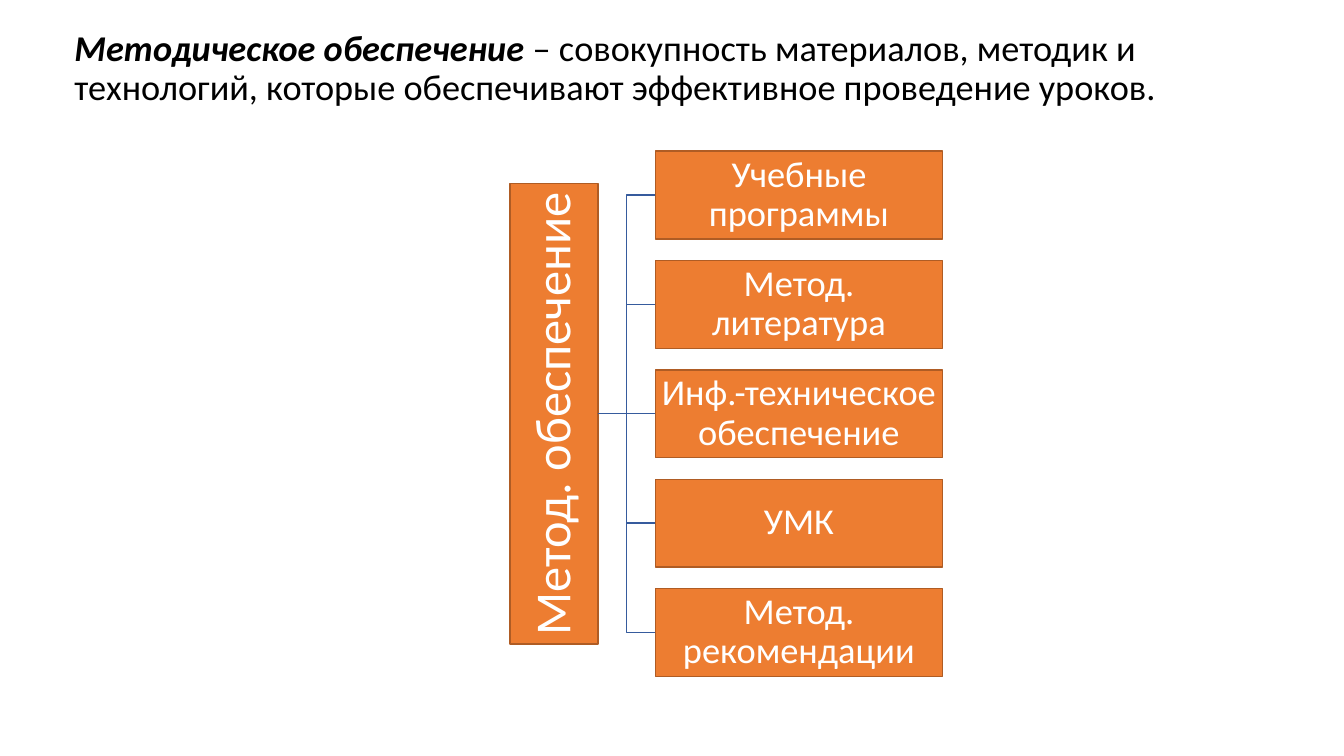
from pptx import Presentation
from pptx import util as u
from pptx.dml.color import RGBColor
from pptx.enum import shapes, text
from pptx.oxml.ns import qn
from lxml import etree

ORANGE = RGBColor(0xED, 0x7D, 0x31)
BROWN = RGBColor(0xAF, 0x5C, 0x24)
BLUE = RGBColor(0x36, 0x5B, 0x9D)
WHITE = RGBColor(0xFF, 0xFF, 0xFF)
BLACK = RGBColor(0, 0, 0)

WIDE, HIGH = 2.85, 0.87
LEFT, TOP, STEP = 6.5, 1.5, 1.085
ROOT, LONG = 5.93, 4.57
BEND = (ROOT + LEFT) / 2
TOPICS = [
    "Учебные программы",
    "Метод. литература",
    "Инф.-техническое обеспечение",
    "УМК",
    "Метод. рекомендации",
]


def style(item, **values):
    for name, value in values.items():
        setattr(item, name, value)


def write(para, words, size, color, **values):
    para.line_spacing = 0.9
    run = para.add_run()
    run.text = words
    style(run.font, name="Calibri", size=u.Pt(size), **values)
    run.font.color.rgb = color


def stroke(line, color):
    line.color.rgb = color
    line.width = u.Pt(1)


def add_title(slide):
    box = slide.shapes.add_textbox(
        u.Inches(0.64), u.Inches(0.25), u.Inches(11.5), u.Inches(1.07))
    box.text_frame.word_wrap = True
    para = box.text_frame.paragraphs[0]
    write(para, "Методическое обеспечение ", 25.9, BLACK, bold=True, italic=True)
    write(para, "– совокупность материалов, методик и технологий, "
          "которые обеспечивают эффективное проведение уроков.", 25.9, BLACK)


def add_box(slide, words, left, top, wide, size, inset, turn=0):
    box = slide.shapes.add_shape(
        shapes.MSO_SHAPE.RECTANGLE, u.Inches(left), u.Inches(top),
        u.Inches(wide), u.Inches(HIGH))
    box.shadow.inherit = False
    box.rotation = turn
    box.fill.solid()
    box.fill.fore_color.rgb = ORANGE
    stroke(box.line, BROWN)
    frame = box.text_frame
    style(frame, word_wrap=True, vertical_anchor=text.MSO_ANCHOR.MIDDLE)
    for side in ("left", "top", "right", "bottom"):
        setattr(frame, f"margin_{side}", u.Inches(inset))
    para = frame.paragraphs[0]
    para.alignment = text.PP_ALIGN.CENTER
    write(para, words, size, WHITE)
    return box


def add_branch(slide, start, end):
    points = [(BEND, start), (BEND, end), (LEFT, end)]
    pen = slide.shapes.build_freeform(
        u.Inches(ROOT), u.Inches(start), scale=1.0)
    pen.add_line_segments(
        [(u.Inches(x), u.Inches(y)) for x, y in points], close=False)
    branch = pen.convert_to_shape()
    branch.shadow.inherit = False
    branch.fill.background()
    stroke(branch.line, BLUE)


def add_link(slide, level, box):
    link = slide.shapes.add_connector(
        shapes.MSO_CONNECTOR.STRAIGHT, u.Inches(ROOT), u.Inches(level),
        u.Inches(LEFT), u.Inches(level))
    link.end_connect(box, 1)
    link.begin_y = link.end_y
    stroke(link.line, BLUE)
    etree.SubElement(link._element.spPr, qn("a:effectLst"))


def add_tree(slide):
    middle = len(TOPICS) // 2
    levels = [TOP + HIGH / 2 + STEP * i for i in range(len(TOPICS))]
    center = levels[middle]
    for level in levels:
        if level != center:
            add_branch(slide, center, level)
    add_box(slide, "Метод. обеспечение", ROOT - (HIGH + LONG) / 2,
            center - HIGH / 2, LONG, 36, 0.03, 270)
    boxes = [add_box(slide, topic, LEFT, level - HIGH / 2, WIDE, 26, 0.02)
             for topic, level in zip(TOPICS, levels)]
    add_link(slide, center, boxes[middle])


def main():
    deck = Presentation()
    style(deck, slide_width=u.Inches(13.33), slide_height=u.Inches(7.5))
    slide = deck.slides.add_slide(deck.slide_layouts[6])
    add_title(slide)
    add_tree(slide)
    deck.save("out.pptx")


if __name__ == "__main__":
    main()
